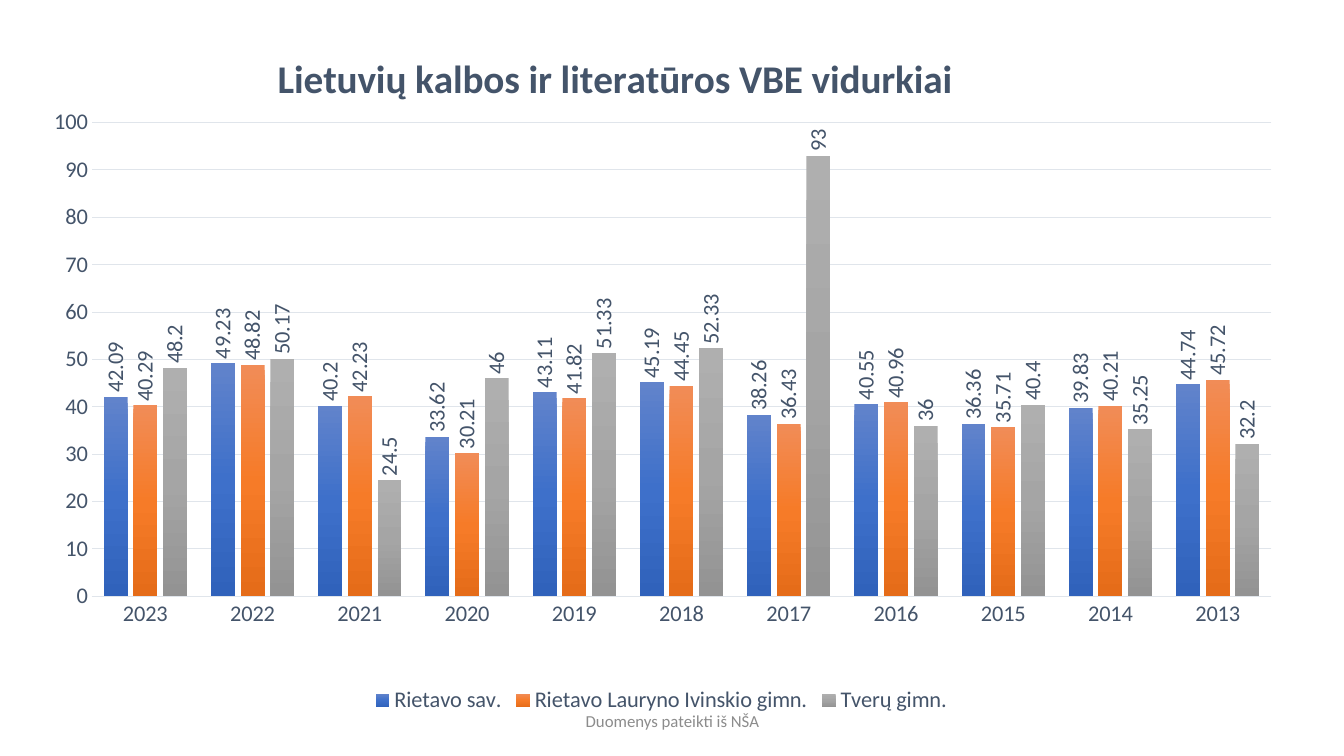
from lxml import etree
from pptx import Presentation
from pptx.chart.data import CategoryChartData
from pptx.dml.color import RGBColor
from pptx.enum.chart import XL_CHART_TYPE as CT, XL_LABEL_POSITION as LP
from pptx.enum.chart import XL_LEGEND_POSITION as LEG, XL_TICK_MARK as TICK
from pptx.enum.text import MSO_ANCHOR, PP_ALIGN
from pptx.oxml import parse_xml
from pptx.oxml.ns import nsdecls, qn
from pptx.util import Inches, Pt

FONT = "Calibri"
SLATE = RGBColor(0x44, 0x54, 0x6A)
GRID = RGBColor(0xE0, 0xE5, 0xEB)
GREY = RGBColor(0x8C, 0x8C, 0x8C)
BLUES = [RGBColor(0x61, 0x83, 0xCB), RGBColor(0x3E, 0x70, 0xCA), RGBColor(0x30, 0x62, 0xBB)]
ORANGES = [RGBColor(0xF1, 0x8C, 0x57), RGBColor(0xF6, 0x7B, 0x28), RGBColor(0xE5, 0x6C, 0x19)]
GREYS = [RGBColor(0xAF, 0xAF, 0xAF), RGBColor(0xA5, 0xA5, 0xA5), RGBColor(0x93, 0x93, 0x93)]

YEARS = [str(year) for year in range(2023, 2012, -1)]
SCHOOLS = [
    ("Rietavo sav.", BLUES,
     [42.09, 49.23, 40.2, 33.62, 43.11, 45.19, 38.26, 40.55, 36.36, 39.83, 44.74]),
    ("Rietavo Lauryno Ivinskio gimn.", ORANGES,
     [40.29, 48.82, 42.23, 30.21, 41.82, 44.45, 36.43, 40.96, 35.71, 40.21, 45.72]),
    ("Tverų gimn.", GREYS,
     [48.2, 50.17, 24.5, 46, 51.33, 52.33, 93, 36, 40.4, 35.25, 32.2]),
]


def style_font(font, size, color, bold=False):
    font.name, font.size, font.bold = FONT, Pt(size), bold
    font.color.rgb = color


def place(element, index, target=None, **sizes):
    """Give a chart part a manual layout, in fractions of the chart."""
    for old in element.findall(qn("c:layout")):
        element.remove(old)
    layout = parse_xml(f"<c:layout {nsdecls('c')}><c:manualLayout/></c:layout>")
    values = {"layoutTarget": target} if target else {}
    values.update(xMode="edge", yMode="edge", **sizes)
    for name, value in values.items():
        etree.SubElement(layout[0], qn(f"c:{name}")).set("val", str(value))
    element.insert(index, layout)


prs = Presentation()
prs.slide_width, prs.slide_height = Inches(13.33), Inches(7.5)
s = prs.slides.add_slide(prs.slide_layouts[6])

# Chart
data = CategoryChartData()
data.categories = YEARS
for name, _, values in SCHOOLS:
    data.add_series(name, values)
chart = s.shapes.add_chart(CT.COLUMN_CLUSTERED, Inches(0.31), Inches(0.31),
                           Inches(12.5), Inches(6.82), data).chart
style_font(chart.font, 16, SLATE)

title = chart.chart_title
title.text_frame.text = "Lietuvių kalbos ir literatūros VBE vidurkiai"
style_font(title.text_frame.paragraphs[0].runs[0].font, 28, SLATE, bold=True)
title.include_in_layout = False
place(title._element, 1, x=0.19, y=0.02)
plot_area = chart._chartSpace.find(".//" + qn("c:plotArea"))
place(plot_area, 0, "inner", x=0.048, y=0.133, w=0.936, h=0.689)

chart.has_legend = True
chart.legend.position = LEG.BOTTOM
chart.legend.include_in_layout = False
style_font(chart.legend.font, 16, SLATE)

# Axes
for axis in (chart.category_axis, chart.value_axis):
    axis.major_tick_mark = axis.minor_tick_mark = TICK.NONE
    style_font(axis.tick_labels.font, 16, SLATE)
value_axis = chart.value_axis
value_axis.minimum_scale, value_axis.maximum_scale, value_axis.major_unit = 0, 100, 10
value_axis.tick_labels.number_format = "0"
value_axis.tick_labels.number_format_is_linked = False
value_axis.format.line.fill.background()
for line in (chart.category_axis.format.line, value_axis.major_gridlines.format.line):
    line.color.rgb = GRID
    line.width = Pt(0.75)

# Columns
plot = chart.plots[0]
plot.gap_width, plot.overlap = 100, -24
plot.vary_by_categories = False
for series, (_, colors, _) in zip(plot.series, SCHOOLS):
    stops = "".join(f'<a:gs pos="{i * 50000}"><a:srgbClr val="{color}"/></a:gs>'
                    for i, color in enumerate(colors))
    series.format.fill.background()
    sp_pr = series._element.find(qn("c:spPr"))
    sp_pr.replace(sp_pr[0], parse_xml(
        f"<a:gradFill {nsdecls('a')}><a:gsLst>{stops}</a:gsLst>"
        '<a:lin ang="5400000" scaled="0"/></a:gradFill>'))
    labels = series.data_labels
    labels.show_value = True
    labels.position = LP.OUTSIDE_END
    style_font(labels.font, 16, SLATE)
    body = labels._element.find(".//" + qn("a:bodyPr"))
    body.set("rot", "-5400000")
    body.set("vert", "horz")

# Source note
tf = s.shapes.add_textbox(Inches(4.42), Inches(6.95), Inches(4.5), Inches(0.4)).text_frame
tf.word_wrap = True
tf.vertical_anchor = MSO_ANCHOR.MIDDLE
tf.text = "Duomenys pateikti iš NŠA"
p = tf.paragraphs[0]
p.alignment = PP_ALIGN.CENTER
style_font(p.runs[0].font, 12, GREY)

prs.save("out.pptx")
